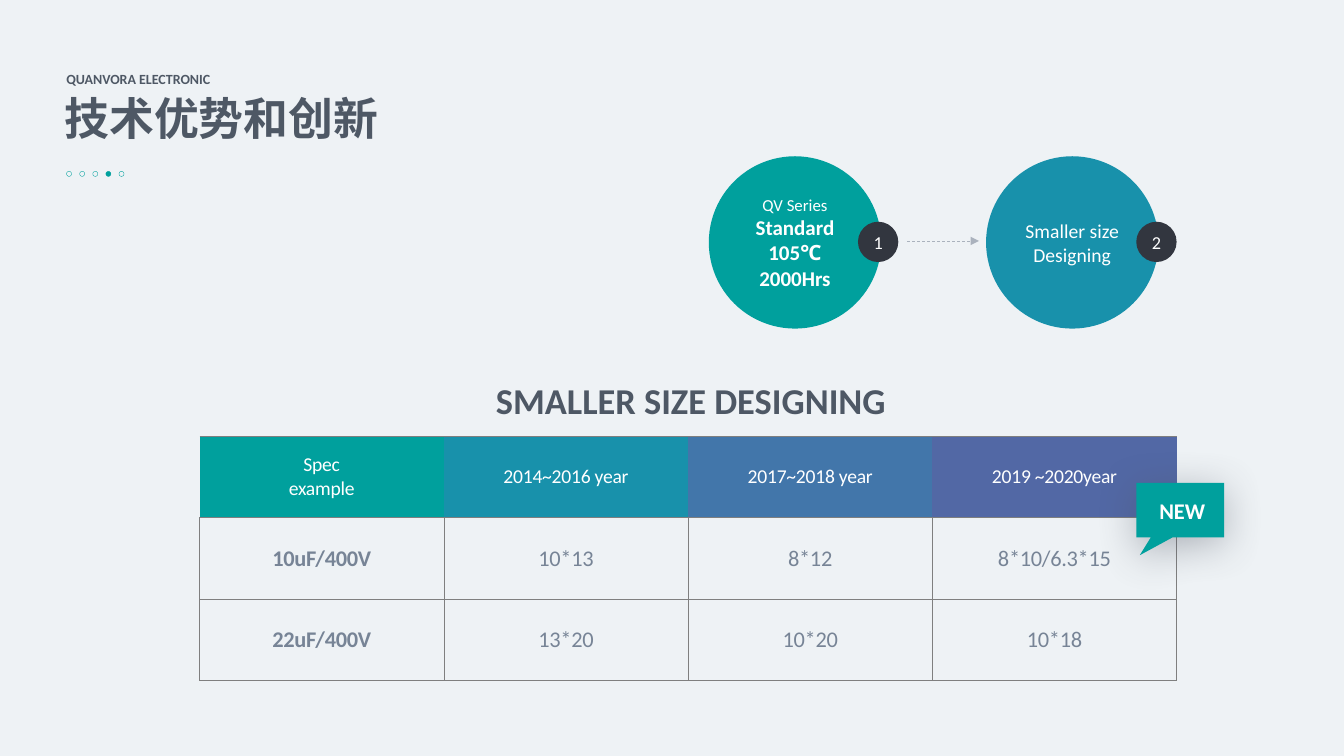
"""Build the slide on technical advantages and smaller size designing."""
import lxml.etree
import pptx
import pptx.dml.color
import pptx.enum.dml
import pptx.enum.shapes
import pptx.enum.text
import pptx.oxml
import pptx.oxml.ns
import pptx.util

Inches = pptx.util.Inches
RGB = pptx.dml.color.RGBColor.from_string
SHAPE = pptx.enum.shapes.MSO_SHAPE
ALIGN = pptx.enum.text.PP_ALIGN
ANCHOR = pptx.enum.text.MSO_ANCHOR
NS = pptx.oxml.ns.nsdecls("a")
THEME = {
    "font": "Calibri", "bg": "EEF2F5", "ink": "4E5865", "body": "778496",
    "white": "FFFFFF", "teal": "00A09D", "cyan": "1891AB", "blue": "4276AA",
    "violet": "5268A5", "dark": "32363F", "arrow": "AAB2BD",
    "border": "7F7F7F", "shadow": "4C5260",
    "title": 32, "heading": 26, "big": 16, "strong": 15, "text": 14,
    "number": 13, "small": 12, "label": 10,
}


def write(tf, *lines, size="text", color="white", bold=False, align=ALIGN.CENTER,
          anchor=ANCHOR.MIDDLE, wrap=True, spacing=None):
    """Fill a text frame; a line is text or a (text, size, bold) tuple."""
    tf.word_wrap = wrap
    tf.vertical_anchor = anchor
    for i, line in enumerate(lines):
        text, line_size, line_bold = (line, size, bold) if isinstance(line, str) else line
        p = tf.paragraphs[0] if i == 0 else tf.add_paragraph()
        p.alignment = align
        r = p.add_run()
        r.text = text
        r.font.name = THEME["font"]
        r.font.size = pptx.util.Pt(THEME[line_size])
        r.font.bold = line_bold
        r.font.color.rgb = RGB(THEME[color])
        if spacing is not None:
            r.font._element.set("spc", str(spacing))


def add_shape(kind, x, y, w, h, fill=None, line=None):
    """Add a flat preset shape."""
    sp = s.shapes.add_shape(kind, Inches(x), Inches(y), Inches(w), Inches(h))
    sp.shadow.inherit = False
    if fill:
        sp.fill.solid()
        sp.fill.fore_color.rgb = RGB(THEME[fill])
    else:
        sp.fill.background()
    if line:
        sp.line.color.rgb = RGB(THEME[line])
        sp.line.width = pptx.util.Pt(0.25)
    else:
        sp.line.fill.background()
    return sp


prs = pptx.Presentation()
prs.slide_width, prs.slide_height = Inches(13.33), Inches(7.5)
s = prs.slides.add_slide(prs.slide_layouts[5])
s.background.fill.solid()
s.background.fill.fore_color.rgb = RGB(THEME["bg"])

title = s.shapes.title
title.left, title.top, title.width, title.height = map(Inches, (0.54, 0.85, 3.34, 0.64))
title.text_frame.auto_size = pptx.enum.text.MSO_AUTO_SIZE.NONE
write(title.text_frame, "技术优势和创新", size="title", color="ink", bold=True,
      align=ALIGN.LEFT, anchor=ANCHOR.TOP, wrap=False)

for text, x, y, w, h, size in [
    ("QUANVORA ELECTRONIC", 0.56, 0.65, 1.66, 0.27, "label"),
    ("SMALLER SIZE DESIGNING", 4.82, 3.7, 4.1, 0.54, "heading"),
]:
    box = s.shapes.add_textbox(Inches(x), Inches(y), Inches(w), Inches(h))
    write(box.text_frame, text, size=size, color="ink", bold=True,
          align=ALIGN.LEFT, anchor=ANCHOR.TOP, wrap=False)

for i in range(5):
    add_shape(SHAPE.OVAL, 0.66 + 0.13 * i, 1.7, 0.05, 0.05,
              fill="teal" if i == 3 else None, line="teal")

rows = [
    [("Spec", "example"), ("2014~2016 year",), ("2017~2018 year",), ("2019 ~2020year",)],
    [("10uF/400V",), ("10*13",), ("8*12",), ("8*10/6.3*15",)],
    [("22uF/400V",), ("13*20",), ("10*20",), ("10*18",)],
]
header_fills = ["teal", "cyan", "blue", "violet"]
table = s.shapes.add_table(3, 4, Inches(1.98), Inches(4.33), Inches(9.69), Inches(2.42)).table
table.first_row = table.horz_banding = False
table._tbl.tblPr.find(pptx.oxml.ns.qn("a:tableStyleId")).text = (
    "{2D5ABB26-0587-4C30-8999-92F81FD0307C}")
for i, row in enumerate(rows):
    for j, lines in enumerate(row):
        cell = table.cell(i, j)
        cell.margin_left = cell.margin_right = Inches(0.12)
        cell.margin_top = cell.margin_bottom = Inches(0.07)
        cell.vertical_anchor = ANCHOR.MIDDLE
        if i == 0:
            cell.fill.solid()
            cell.fill.fore_color.rgb = RGB(THEME[header_fills[j]])
        else:
            cell.fill.background()
        write(cell.text_frame, *lines, size="big" if i else "text",
              color="body" if i else "white", bold=i > 0 and j == 0, spacing=-20)
        for k, side in enumerate("TB" if i == 0 else "LRTB"):
            cell._tc.tcPr.insert(k, pptx.oxml.parse_xml(
                f'<a:ln{side} {NS} w="6350"><a:solidFill><a:srgbClr val="{THEME["border"]}">'
                f'<a:alpha val="50000"/></a:srgbClr></a:solidFill></a:ln{side}>'))

steps = [
    (7.03, 8.51, "teal", [("QV Series", "small", False), ("Standard 105℃ 2000Hrs", "strong", True)]),
    (9.78, 11.27, "cyan", ["Smaller size Designing"]),
]
for number, (x, badge_x, fill, lines) in enumerate(steps, 1):
    circle = add_shape(SHAPE.OVAL, x, 1.55, 1.71, 1.71, fill)
    write(circle.text_frame, *lines)
    badge = add_shape(SHAPE.OVAL, badge_x, 2.2, 0.4, 0.4, "dark")
    badge.text_frame.margin_left = badge.text_frame.margin_right = 0
    write(badge.text_frame, str(number), size="number")

arrow = s.shapes.add_connector(pptx.enum.shapes.MSO_CONNECTOR.STRAIGHT,
                               Inches(9), Inches(2.39), Inches(9.71), Inches(2.39))
arrow.line.color.rgb = RGB(THEME["arrow"])
arrow.line.width = pptx.util.Pt(0.5)
arrow.line.dash_style = pptx.enum.dml.MSO_LINE.DASH
lxml.etree.SubElement(arrow.line._get_or_add_ln(), pptx.oxml.ns.qn("a:tailEnd"), type="triangle")
lxml.etree.SubElement(arrow._element.spPr, pptx.oxml.ns.qn("a:effectLst"))

callout = add_shape(SHAPE.RECTANGULAR_CALLOUT, 11.27, 4.79, 0.87, 0.54, "teal")
callout.adjustments[0], callout.adjustments[1] = -0.46, 0.83
callout._element.spPr.find(pptx.oxml.ns.qn("a:effectLst")).append(pptx.oxml.parse_xml(
    f'<a:outerShdw {NS} blurRad="381000" dist="63500" dir="5400000" rotWithShape="0">'
    f'<a:srgbClr val="{THEME["shadow"]}"><a:alpha val="40000"/></a:srgbClr></a:outerShdw>'))
box = s.shapes.add_textbox(Inches(11.4), Inches(4.88), Inches(0.87), Inches(0.38))
write(box.text_frame, "NEW", size="big", bold=True, align=ALIGN.LEFT, anchor=ANCHOR.TOP)

prs.save("out.pptx")
